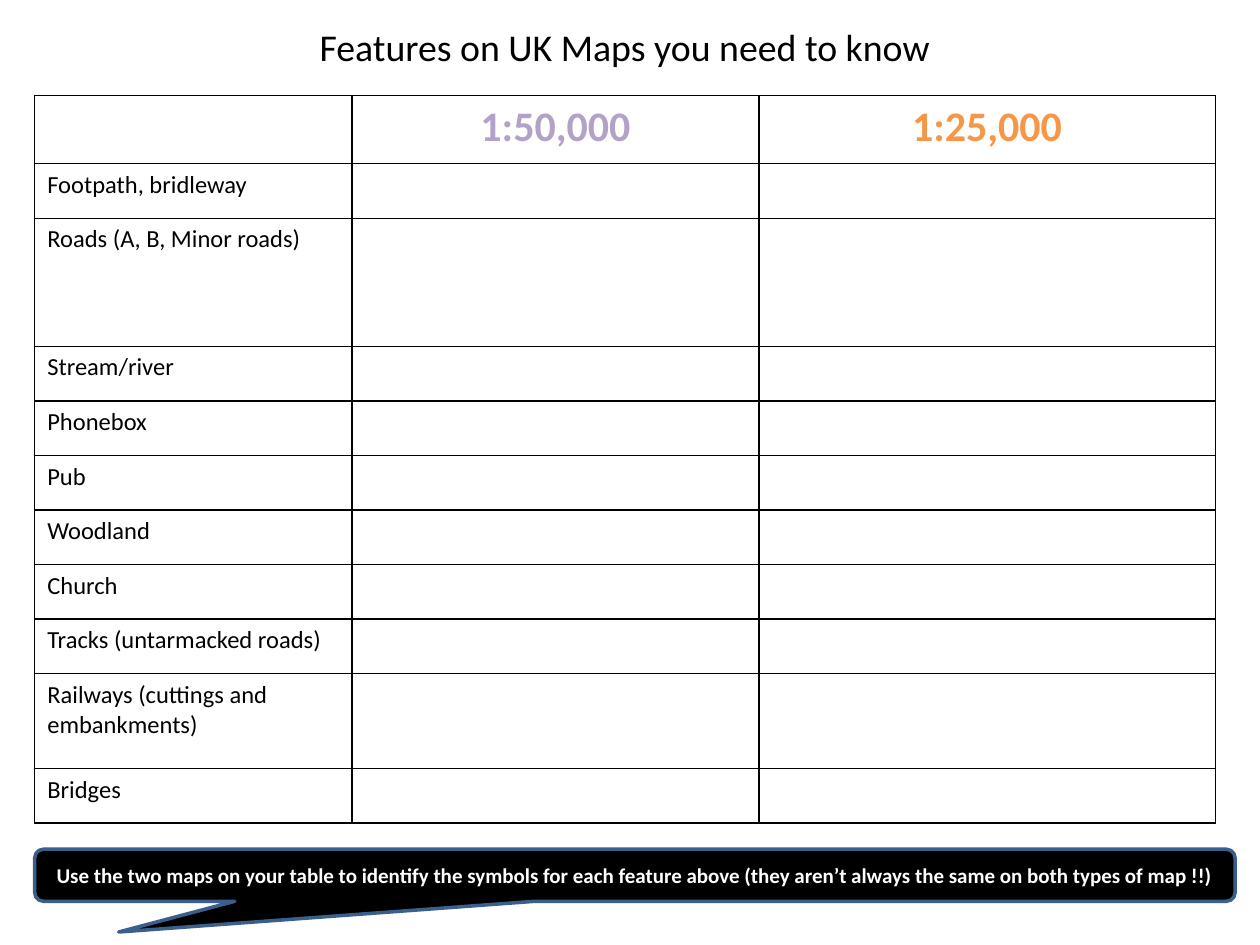
"""Build a worksheet slide comparing map symbols at two scales."""
from lxml.etree import SubElement
from pptx import Presentation
from pptx.dml.color import RGBColor
from pptx.enum.shapes import MSO_SHAPE
from pptx.enum.text import MSO_ANCHOR, MSO_AUTO_SIZE, PP_ALIGN
from pptx.oxml.ns import qn
from pptx.util import Cm, Pt

COLOURS = {
    "black": "000000",
    "white": "FFFFFF",
    "purple": "B3A2C7",
    "orange": "F79646",
    "blue": "3A5F8C",
}
FEATURES = [
    ("Footpath, bridleway", 1.1),
    ("Roads (A, B, Minor roads)", 2.58),
    ("Stream/river", 1.1),
    ("Phonebox", 1.1),
    ("Pub", 1.1),
    ("Woodland", 1.1),
    ("Church", 1.1),
    ("Tracks (untarmacked roads)", 1.1),
    ("Railways (cuttings and embankments)", 1.91),
    ("Bridges", 1.1),
]
SCALES = [("1:50,000", "purple"), ("1:25,000", "orange")]
COLUMN_WIDTHS = [6.4, 8.2, 9.2]
HEADER_HEIGHT = 1.37


def write_text(text_frame, text, size, colour="black", bold=False, align=PP_ALIGN.CENTER):
    paragraph = text_frame.paragraphs[0]
    paragraph.alignment = align
    run = paragraph.add_run()
    run.text = text
    run.font.name = "Calibri"
    run.font.size = Pt(size)
    run.font.bold = bold
    run.font.color.rgb = RGBColor.from_string(COLOURS[colour])


def format_cell(cell):
    properties = cell._tc.get_or_add_tcPr()
    for side in ("a:lnL", "a:lnR", "a:lnT", "a:lnB"):
        border = SubElement(properties, qn(side), w=str(Pt(1)))
        fill = SubElement(border, qn("a:solidFill"))
        SubElement(fill, qn("a:srgbClr"), val=COLOURS["black"])
    cell.fill.solid()
    cell.fill.fore_color.rgb = RGBColor.from_string(COLOURS["white"])


presentation = Presentation()
presentation.slide_width = Cm(25.4)
presentation.slide_height = Cm(19.05)
slide = presentation.slides.add_slide(presentation.slide_layouts[5])

title = slide.shapes.title
title.left, title.top, title.width, title.height = Cm(1.25), Cm(0.33), Cm(22.86), Cm(1.2)
title.text_frame.auto_size = MSO_AUTO_SIZE.NONE
title.text_frame.vertical_anchor = MSO_ANCHOR.MIDDLE
write_text(title.text_frame, "Features on UK Maps you need to know ", 21.6)

row_heights = [HEADER_HEIGHT] + [height for _, height in FEATURES]
table = slide.shapes.add_table(
    len(row_heights), len(COLUMN_WIDTHS), Cm(0.7), Cm(1.93),
    Cm(sum(COLUMN_WIDTHS)), Cm(sum(row_heights)),
).table
table.first_row = False
table.horz_banding = False
for column, width in zip(table.columns, COLUMN_WIDTHS):
    column.width = Cm(width)
for row, height in zip(table.rows, row_heights):
    row.height = Cm(height)
for cell in table.iter_cells():
    format_cell(cell)
for column_index, (scale, colour) in enumerate(SCALES, start=1):
    write_text(table.cell(0, column_index).text_frame, scale, 24, colour, bold=True)
for row_index, (feature, _) in enumerate(FEATURES, start=1):
    write_text(table.cell(row_index, 0).text_frame, feature, 14, align=PP_ALIGN.LEFT)

callout = slide.shapes.add_shape(
    MSO_SHAPE.ROUNDED_RECTANGULAR_CALLOUT, Cm(0.7), Cm(17.12), Cm(24.2), Cm(1.05)
)
callout.shadow.inherit = False
for index, value in enumerate((-0.43, 1.09, 0.17)):
    callout.adjustments[index] = value
callout.fill.solid()
callout.fill.fore_color.rgb = RGBColor.from_string(COLOURS["black"])
callout.line.color.rgb = RGBColor.from_string(COLOURS["blue"])
callout.line.width = Pt(2)
callout.text_frame.word_wrap = True
callout.text_frame.vertical_anchor = MSO_ANCHOR.MIDDLE
write_text(
    callout.text_frame,
    "Use the two maps on your table to identify the symbols for each feature above "
    "(they aren’t always the same on both types of map !!)",
    12, "white", bold=True,
)

presentation.save("out.pptx")
